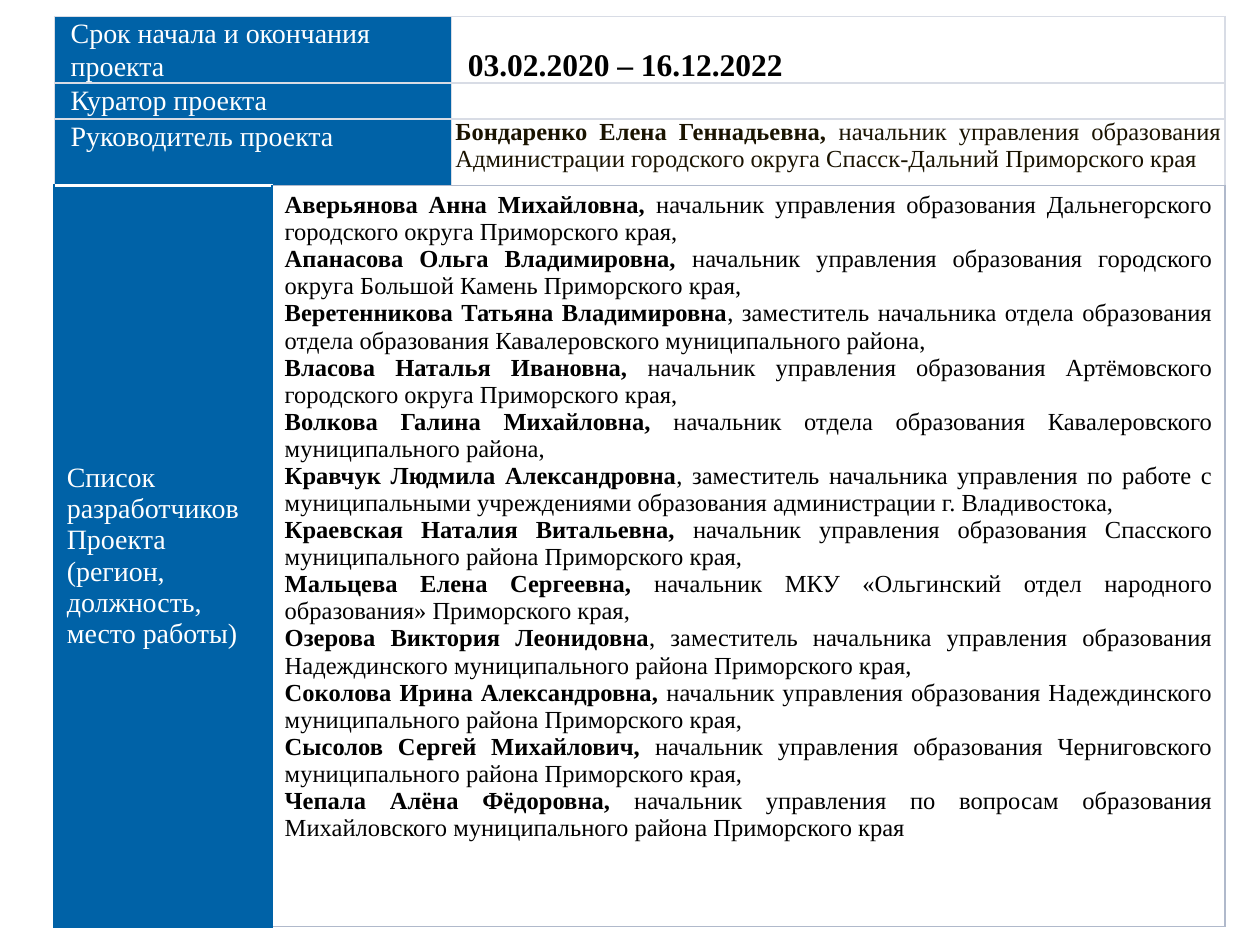
import pptx
import pptx.util
import pptx.dml.color
import pptx.enum.text
import lxml.etree
from pptx.oxml.ns import qn

Pt = pptx.util.Pt
ALIGN = pptx.enum.text.PP_ALIGN
ANCHOR = pptx.enum.text.MSO_ANCHOR

FONT = "Times New Roman"
BLUE, WHITE, BLACK, BROWN = "0062A7", "FFFFFF", "000000", "1A1300"
PALE, GREY = "D8DCE5", "B0B9CB"
LEFT, TOP = 31, 9.5
PASSPORT_COLUMNS, PASSPORT_ROWS = (227, 442), (38, 20.5, 38)
TEAM_COLUMNS, TEAM_ROWS = (124.5, 544.5), (423.5,)

LABELS = ["Срок начала и окончания проекта", "Куратор проекта", "Руководитель проекта"]
DATES = "03.02.2020 – 16.12.2022"
LEADER = ("Бондаренко Елена Геннадьевна, ",
          "начальник управления образования Администрации городского округа "
          "Спасск-Дальний Приморского края")
TEAM_LABEL = ["Список разработчиков", "Проекта (регион, должность, место работы)"]
TEAM = [
    ("Аверьянова Анна Михайловна, ",
     "начальник управления образования Дальнегорского городского округа Приморского края,"),
    ("Апанасова Ольга Владимировна, ",
     "начальник управления образования городского округа Большой Камень Приморского края,"),
    ("Веретенникова Татьяна Владимировна",
     ", заместитель начальника отдела образования отдела образования "
     "Кавалеровского муниципального района,"),
    ("Власова Наталья Ивановна, ",
     "начальник управления образования Артёмовского городского округа Приморского края,"),
    ("Волкова Галина Михайловна, ",
     "начальник отдела образования Кавалеровского муниципального района,"),
    ("Кравчук Людмила Александровна",
     ", заместитель начальника управления по работе с муниципальными учреждениями "
     "образования администрации г. Владивостока,"),
    ("Краевская Наталия Витальевна, ",
     "начальник управления образования Спасского муниципального района Приморского края,"),
    ("Мальцева Елена Сергеевна, ",
     "начальник МКУ «Ольгинский отдел народного образования» Приморского края,"),
    ("Озерова Виктория Леонидовна",
     ", заместитель начальника управления образования Надеждинского "
     "муниципального района Приморского края,"),
    ("Соколова Ирина Александровна, ",
     "начальник управления образования Надеждинского муниципального района Приморского края,"),
    ("Сысолов Сергей Михайлович, ",
     "начальник управления образования Черниговского муниципального района Приморского края,"),
    ("Чепала Алёна Фёдоровна, ",
     "начальник управления по вопросам образования Михайловского "
     "муниципального района Приморского края"),
]


def color(value):
    return pptx.dml.color.RGBColor.from_string(value)


def add_grid(page, top, columns, rows):
    frame = page.shapes.add_table(len(rows), len(columns), Pt(LEFT), Pt(top),
                                  Pt(sum(columns)), Pt(sum(rows)))
    grid = frame.table
    grid.first_row = grid.horz_banding = False
    for column, width in zip(grid.columns, columns):
        column.width = Pt(width)
    for row, height in zip(grid.rows, rows):
        row.height = Pt(height)
    return grid


def paint(cell, fill, borders):
    """Fill a cell and draw its left, right, top and bottom borders."""
    cell.fill.solid()
    cell.fill.fore_color.rgb = color(fill)
    properties = cell._tc.get_or_add_tcPr()
    for place, (side, (shade, width)) in enumerate(zip("LRTB", borders)):
        line = lxml.etree.Element(qn("a:ln" + side), w=str(Pt(width)))
        solid = lxml.etree.SubElement(line, qn("a:solidFill"))
        lxml.etree.SubElement(solid, qn("a:srgbClr"), val=shade)
        properties.insert(place, line)


def write(cell, paragraphs, size, shade, align=ALIGN.LEFT):
    """Write paragraphs, each a list of (text, bold) spans."""
    frame = cell.text_frame
    for number, spans in enumerate(paragraphs):
        para = frame.add_paragraph() if number else frame.paragraphs[0]
        para.alignment = align
        for text, bold in spans:
            span = para.add_run()
            span.text = text
            span.font.name = FONT
            span.font.size = Pt(size)
            span.font.bold = bold
            span.font.color.rgb = color(shade)


def indent(cell):
    para = cell.text_frame.paragraphs[0]
    para.line_spacing = 1.07
    para._p.get_or_add_pPr().set("marL", str(Pt(7.2)))
    para._p.get_or_add_pPr().set("indent", "0")


def person(entry):
    name, post = entry
    return [(name, True), (post, False)]


deck = pptx.Presentation()
deck.slide_width, deck.slide_height = Pt(720), Pt(540)
page = deck.slides.add_slide(deck.slide_layouts[6])

passport = add_grid(page, TOP, PASSPORT_COLUMNS, PASSPORT_ROWS)
for row, label in enumerate(LABELS):
    for column, fill in enumerate((BLUE, WHITE)):
        cell = passport.cell(row, column)
        paint(cell, fill, [(PALE, 1)] * 4)
        cell.margin_left = cell.margin_right = Pt(2.2)
        cell.margin_top = cell.margin_bottom = 0
    write(passport.cell(row, 0), [[(label, False)]], 16, WHITE)
    indent(passport.cell(row, 0))

dates, curator, leader = (passport.cell(row, 1) for row in range(len(LABELS)))
write(dates, [[(DATES, True)]], 18, BLACK)
indent(dates)
dates.vertical_anchor = ANCHOR.BOTTOM
# The empty cell needs a small text size so that its row stays low
lxml.etree.SubElement(curator.text_frame.paragraphs[0]._p, qn("a:endParaRPr"), sz="1200")
write(leader, [person(LEADER)], 14, BROWN, ALIGN.JUSTIFY)

team = add_grid(page, TOP + sum(PASSPORT_ROWS), TEAM_COLUMNS, TEAM_ROWS)
heading, members = team.cell(0, 0), team.cell(0, 1)
paint(heading, BLUE, [(BLUE, 1.5), (BLUE, 1), (WHITE, 1.5), (BLUE, 1.5)])
paint(members, WHITE, [(BLUE, 1)] + [(GREY, 1)] * 3)
heading.vertical_anchor = ANCHOR.MIDDLE
write(heading, [[(text, False)] for text in TEAM_LABEL], 16, WHITE)
write(members, [person(entry) for entry in TEAM], 14, BLACK, ALIGN.JUSTIFY)

deck.save("out.pptx")
